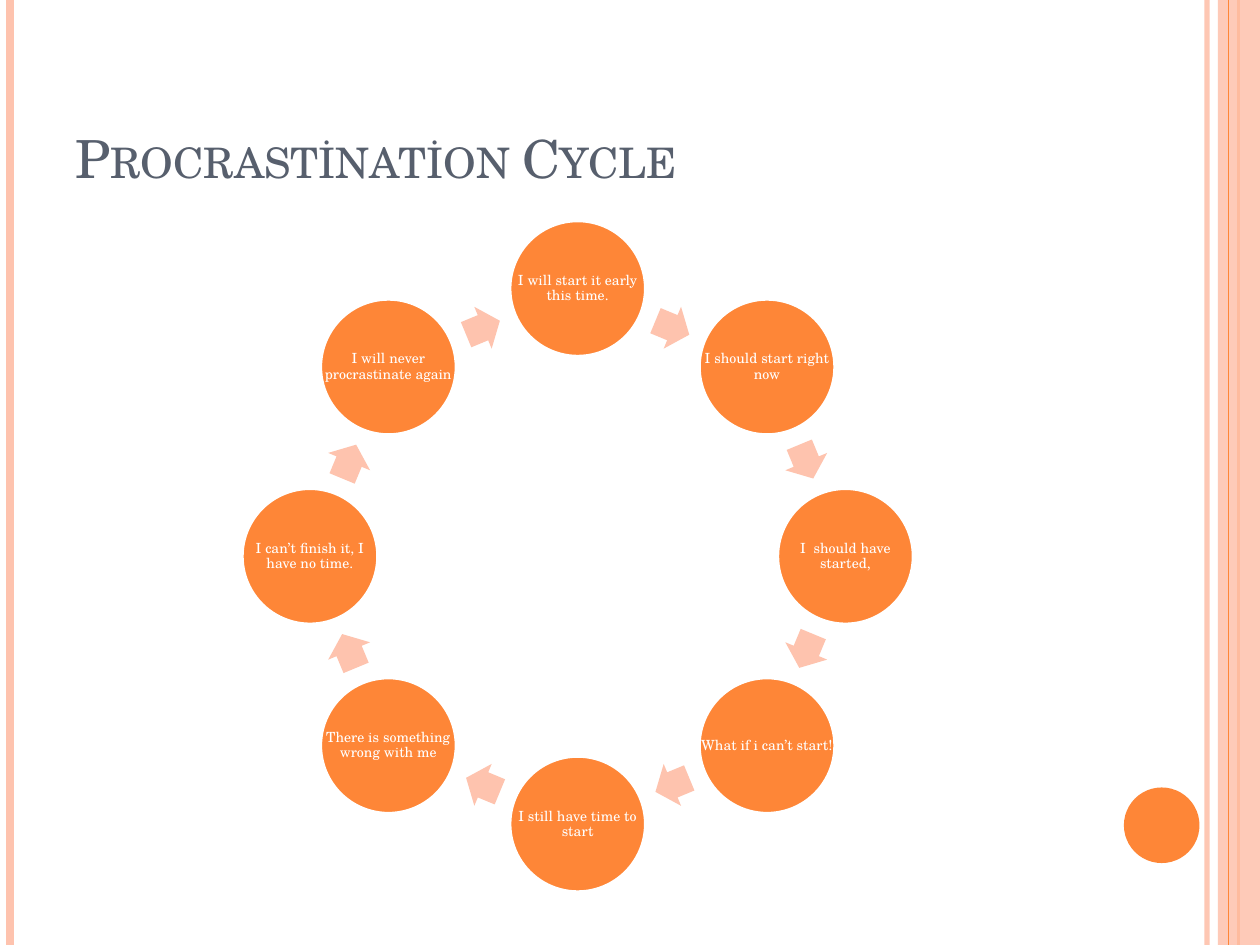
import math

from pptx import Presentation
from pptx.dml.color import RGBColor
from pptx.enum import lang, shapes, text
from pptx.oxml.ns import qn
from pptx.util import Pt
from lxml import etree

ORANGE = RGBColor(0xFE, 0x86, 0x37)
PEACH = RGBColor(0xFE, 0xC3, 0xAE)
SLATE = RGBColor(0x57, 0x5F, 0x6D)
WHITE = RGBColor(0xFF, 0xFF, 0xFF)
FONT = "TeX Gyre Schola"
WIDTH, HEIGHT = 720, 540

STEPS = [
    "I will start it early this time.",
    "I should start right now",
    "I  should have started,",
    "What if i can’t start!",
    "I still have time to start",
    "There is something wrong with me",
    "I can’t finish it, I have no time.",
    "I will never procrastinate again",
]


def set_opacity(element, percent):
    """Make the solid colour inside a fill or line element see-through."""
    color = next(element.iter(qn("a:srgbClr")))
    etree.SubElement(color, qn("a:alpha")).set("val", str(percent * 1000))


def write_text(shape, words, size, color, align=None, anchor=None,
               margin=None, line_spacing=None):
    frame = shape.text_frame
    frame.word_wrap = True
    frame.vertical_anchor = anchor
    if margin is not None:
        frame.margin_left = frame.margin_right = Pt(margin)
        frame.margin_top = frame.margin_bottom = Pt(margin)
    paragraph = frame.paragraphs[0]
    paragraph.alignment = align
    paragraph.line_spacing = line_spacing
    run = paragraph.add_run()
    run.text = words
    run.font.name = FONT
    run.font.size = Pt(size)
    run.font.color.rgb = color
    return run


def add_filled(slide, kind, left, top, width, height, color, outline=None):
    shape = slide.shapes.add_shape(kind, Pt(left), Pt(top), Pt(width), Pt(height))
    shape.shadow.inherit = False
    shape.fill.solid()
    shape.fill.fore_color.rgb = color
    if outline is None:
        shape.line.fill.background()
    else:
        shape.line.color.rgb = outline
        shape.line.width = Pt(2)
    return shape


def add_stripe(slide, x, width, color, opacity=100):
    """Draw a vertical line over the full height of the slide."""
    line = slide.shapes.add_connector(
        shapes.MSO_CONNECTOR.STRAIGHT, Pt(x), Pt(0), Pt(x), Pt(HEIGHT))
    line.line.color.rgb = color
    line.line.width = Pt(width)
    properties = line._element.spPr
    etree.SubElement(properties, qn("a:effectLst"))
    if opacity < 100:
        set_opacity(properties, opacity)


def add_side_decoration(slide):
    add_stripe(slide, 689.76, 3, PEACH, opacity=93)
    add_stripe(slide, 5.76, 4.5, PEACH)
    add_stripe(slide, 707.76, 1.5, ORANGE)
    band = add_filled(slide, shapes.MSO_SHAPE.RECTANGLE,
                      696, 0, WIDTH - 696, HEIGHT, PEACH)
    set_opacity(band._element.spPr, 87)
    add_stripe(slide, 702, 0.75, ORANGE)
    add_filled(slide, shapes.MSO_SHAPE.OVAL, 642.24, 450, 43.2, 43.2, ORANGE)


def add_title(slide, words, left, top, width, height):
    title = slide.shapes.title
    title.left, title.top = Pt(left), Pt(top)
    title.width, title.height = Pt(width), Pt(height)
    run = write_text(title, words, 30, SLATE, align=text.PP_ALIGN.LEFT,
                     anchor=text.MSO_ANCHOR.BOTTOM)
    run.font.language_id = lang.MSO_LANGUAGE_ID.TURKISH
    run._r.get_or_add_rPr().set("cap", "small")


def add_step(slide, words, left, top, diameter):
    add_filled(slide, shapes.MSO_SHAPE.OVAL, left, top, diameter, diameter,
               ORANGE, outline=WHITE)
    label = slide.shapes.add_textbox(Pt(left), Pt(top), Pt(diameter), Pt(diameter))
    write_text(label, words, 8, WHITE, align=text.PP_ALIGN.CENTER,
               anchor=text.MSO_ANCHOR.MIDDLE, margin=0.72, line_spacing=0.9)


def add_cycle(slide, steps, left, top, size):
    """Place the steps clockwise on a ring, with an arrow after each one."""
    diameter = 77.76
    arrow_width, arrow_height = 20.88, 25.92
    radius = (size - diameter) / 2
    turn = 360 / len(steps)
    arrow_radius = radius * math.cos(math.radians(turn / 2))

    def corner(angle, distance, width, height):
        x = left + size / 2 + distance * math.sin(math.radians(angle))
        y = top + size / 2 - distance * math.cos(math.radians(angle))
        return x - width / 2, y - height / 2

    for index, words in enumerate(steps):
        angle = index * turn
        add_step(slide, words, *corner(angle, radius, diameter, diameter), diameter)
        angle += turn / 2
        arrow = add_filled(
            slide, shapes.MSO_SHAPE.RIGHT_ARROW,
            *corner(angle, arrow_radius, arrow_width, arrow_height),
            arrow_width, arrow_height, PEACH)
        arrow.adjustments[0], arrow.adjustments[1] = 0.6, 0.5
        arrow.rotation = angle


def main():
    presentation = Presentation()
    presentation.slide_width, presentation.slide_height = Pt(WIDTH), Pt(HEIGHT)
    slide = presentation.slides.add_slide(presentation.slide_layouts[5])
    add_side_decoration(slide)
    add_title(slide, "Procrastination Cycle", 36, 21.6, 588.24, 90)
    add_cycle(slide, STEPS, 138.24, 126, 383.76)
    presentation.save("out.pptx")


if __name__ == "__main__":
    main()
